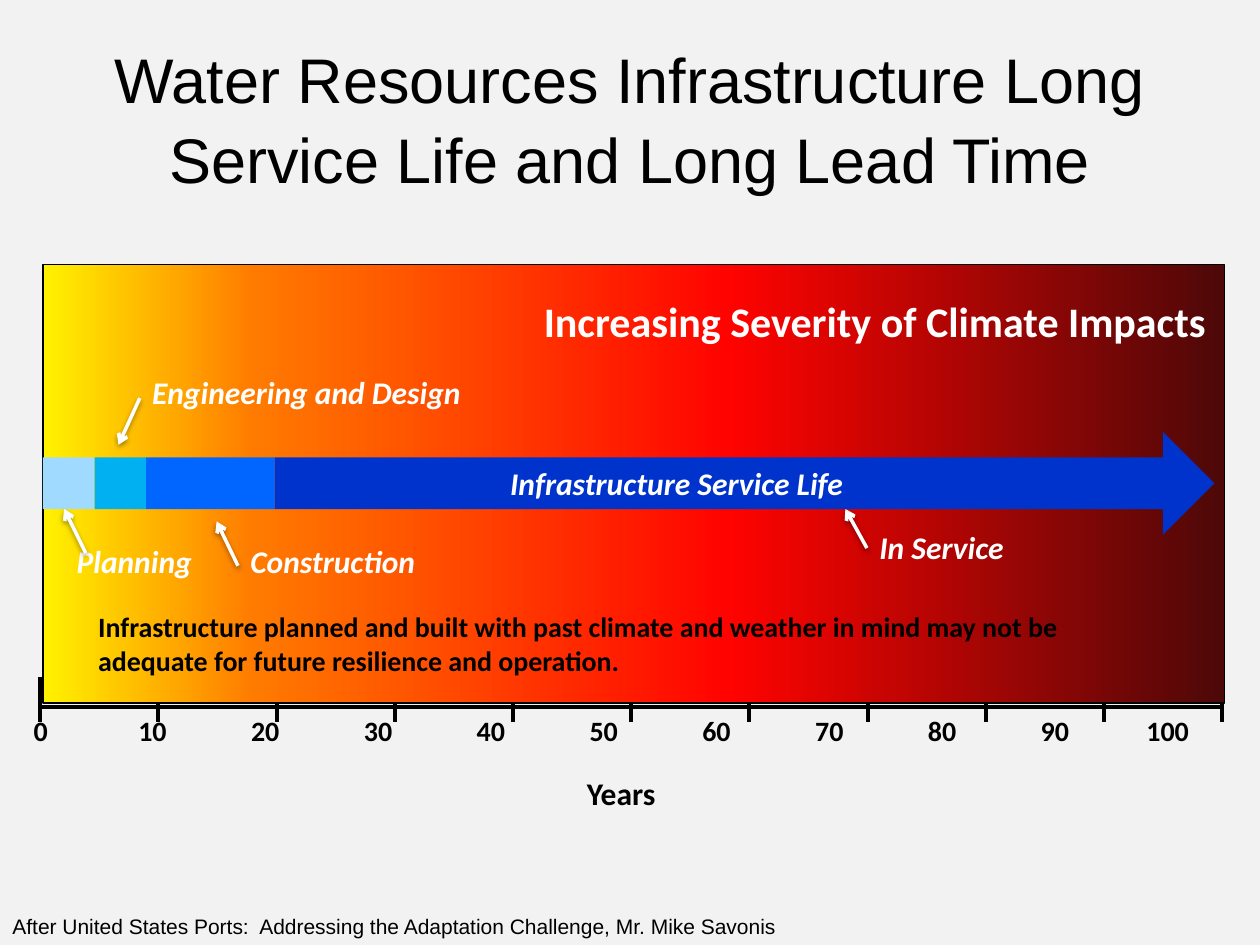
from lxml import etree
from pptx import Presentation
from pptx import util as u
from pptx.dml.color import RGBColor
from pptx.enum import shapes, text
from pptx.oxml import ns

COLORS = {
    "background": "F2F2F2", "black": "000000", "white": "FFFFFF",
    "planning": "A0DAFE", "design": "00B0F0", "construction": "0066FF",
    "service": "0033CC",
}
SEVERITY = [(0, "FFF200"), (18, "FF7A00"), (58, "FF0300"), (100, "4D0808")]
PHASES = [("planning", 29.5), ("design", 29.5), ("construction", 73.5)]
PHASE_LABELS = [
    ("Planning", 36.7, 306, 92),
    ("Engineering and Design", 79.9, 209.5, 208),
    ("Construction", 136, 306, 114),
    ("Infrastructure Service Life", 284.4, 261.4, 207.4),
    ("In Service", 495.4, 298, 89.3),
]
POINTERS = [
    (79.9, 227.5, 67.7, 254.2),
    (136, 323.3, 123.8, 298),
    (49, 316, 36.7, 290.9),
    (495.4, 313.2, 483.1, 290.9),
]
LABEL = {"name": "Calibri", "size": u.Pt(18), "bold": True}
PHASE_LABEL = {**LABEL, "italic": True}
BAND_LEFT, BAND_TOP, BAND_HEIGHT = 24.5, 261.4, 29.5
AXIS_LEFT, AXIS_TOP, TICK_GAP, DECADES = 23, 403.9, 67.54, 10
NUMBER_START, NUMBER_GAP = 3.4, 64.46


def rgb(name):
    return RGBColor.from_string(COLORS[name])


def points(*lengths):
    return [u.Pt(length) for length in lengths]


def add_xml(parent, tag, **attributes):
    return etree.SubElement(parent, ns.qn(tag), attributes)


def format_paragraph(para, wording, color, formats):
    span = para.add_run()
    span.text = wording
    span.font.color.rgb = rgb(color)
    for key, value in formats.items():
        setattr(span.font, key, value)


def add_text(page, wording, place, color, formats, wrap=True, align=text.PP_ALIGN.LEFT):
    box = page.shapes.add_textbox(*points(*place))
    frame = box.text_frame
    frame.word_wrap = wrap
    frame.auto_size = text.MSO_AUTO_SIZE.SHAPE_TO_FIT_TEXT
    para = frame.paragraphs[0]
    para.alignment = align
    format_paragraph(para, wording, color, formats)
    return para


def add_block(page, kind, place, color=None):
    block = page.shapes.add_shape(kind, *points(*place))
    block.shadow.inherit = False
    block.line.fill.background()
    if color:
        block.fill.solid()
        block.fill.fore_color.rgb = rgb(color)
    return block


def add_line(page, ends, color, width):
    line = page.shapes.add_connector(shapes.MSO_CONNECTOR.STRAIGHT, *points(*ends))
    line.line.color.rgb = rgb(color)
    line.line.width = u.Pt(width)
    return line, add_xml(line.element.spPr, "a:effectLst")


def add_pointer(page, ends):
    pointer, effects = add_line(page, ends, "white", 2)
    add_xml(pointer.element.spPr.find(ns.qn("a:ln")), "a:tailEnd", type="arrow")
    shadow = add_xml(effects, "a:outerShdw", blurRad=str(u.Pt(3.1)),
                     dist=str(u.Pt(1.6)), dir="5400000", rotWithShape="0")
    shade = add_xml(shadow, "a:srgbClr", val=COLORS["black"])
    add_xml(shade, "a:alpha", val="38000")


def add_title(page):
    title = page.shapes.title
    title.left, title.top, title.width, title.height = points(0, 21.6, 720, 90)
    frame = title.text_frame
    frame.word_wrap = True
    frame.auto_size = text.MSO_AUTO_SIZE.NONE
    frame.vertical_anchor = text.MSO_ANCHOR.MIDDLE
    para = frame.paragraphs[0]
    para.alignment = text.PP_ALIGN.CENTER
    para.line_spacing = 1.05
    format_paragraph(para, "Water Resources Infrastructure Long Service Life and Long Lead Time",
                     "black", {"name": "Arial", "size": u.Pt(36)})


def add_axis(page):
    axis_right = AXIS_LEFT + DECADES * TICK_GAP
    add_line(page, (AXIS_LEFT, AXIS_TOP, axis_right, AXIS_TOP), "black", 2.25)
    for decade in range(DECADES + 1):
        left = AXIS_LEFT + decade * TICK_GAP
        add_line(page, (left, 386.6, left, 412.6), "black", 2.25)
    numbers = "\t".join(str(10 * decade) for decade in range(DECADES + 1))
    para = add_text(page, numbers, (12.2, AXIS_TOP, 707.8, 32.4), "black",
                    {**LABEL, "size": u.Pt(16)})
    tabs = add_xml(para._p.get_or_add_pPr(), "a:tabLst")
    for decade in range(1, DECADES + 1):
        stop = u.Pt(NUMBER_START + decade * NUMBER_GAP)
        add_xml(tabs, "a:tab", pos=str(stop), algn="ctr")
    add_text(page, "Years", (328.3, 438.5, 55.4, 36), "black", LABEL, wrap=False)


def add_severity_panel(page):
    panel = add_block(page, shapes.MSO_SHAPE.RECTANGLE, (BAND_LEFT, 151.2, 675.4, 250.6))
    panel.fill.gradient()
    panel.fill.gradient_angle = 0
    stops = panel.element.spPr.find(".//" + ns.qn("a:gsLst"))
    stops.clear()
    for percent, color in SEVERITY:
        stop = add_xml(stops, "a:gs", pos=str(percent * 1000))
        add_xml(stop, "a:srgbClr", val=color)
    panel.line.color.rgb = rgb("black")
    panel.line.width = u.Pt(0.75)


def add_phases(page):
    left = BAND_LEFT
    for color, width in PHASES:
        add_block(page, shapes.MSO_SHAPE.RECTANGLE,
                  (left, BAND_TOP, width, BAND_HEIGHT), color)
        left += width
    add_block(page, shapes.MSO_SHAPE.RIGHT_ARROW,
              (left, BAND_TOP - BAND_HEIGHT / 2, 537, 2 * BAND_HEIGHT), "service")


def main():
    deck = Presentation()
    deck.slide_width, deck.slide_height = points(720, 540)
    page = deck.slides.add_slide(deck.slide_layouts[5])
    page.background.fill.solid()
    page.background.fill.fore_color.rgb = rgb("background")

    add_title(page)
    add_axis(page)
    add_severity_panel(page)
    add_phases(page)
    add_text(page, "Increasing Severity of Climate Impacts", (36.7, 165.6, 659.5, 36),
             "white", {**LABEL, "size": u.Pt(24)}, align=text.PP_ALIGN.RIGHT)
    add_text(page, "Infrastructure planned and built with past climate and weather in mind "
             "may not be adequate for future resilience and operation.",
             (49, 344.9, 625.7, 56.9), "black", {**LABEL, "size": u.Pt(16)})
    for wording, left, top, width in PHASE_LABELS:
        add_text(page, wording, (left, top, width, 36), "white", PHASE_LABEL, wrap=False)
    for ends in POINTERS:
        add_pointer(page, ends)
    add_text(page, "After United States Ports:  Addressing the Adaptation Challenge, "
             "Mr. Mike Savonis", (0, 518.4, 661.7, 21.6), "black",
             {"name": "Arial", "size": u.Pt(12)})
    deck.save("out.pptx")


if __name__ == "__main__":
    main()
